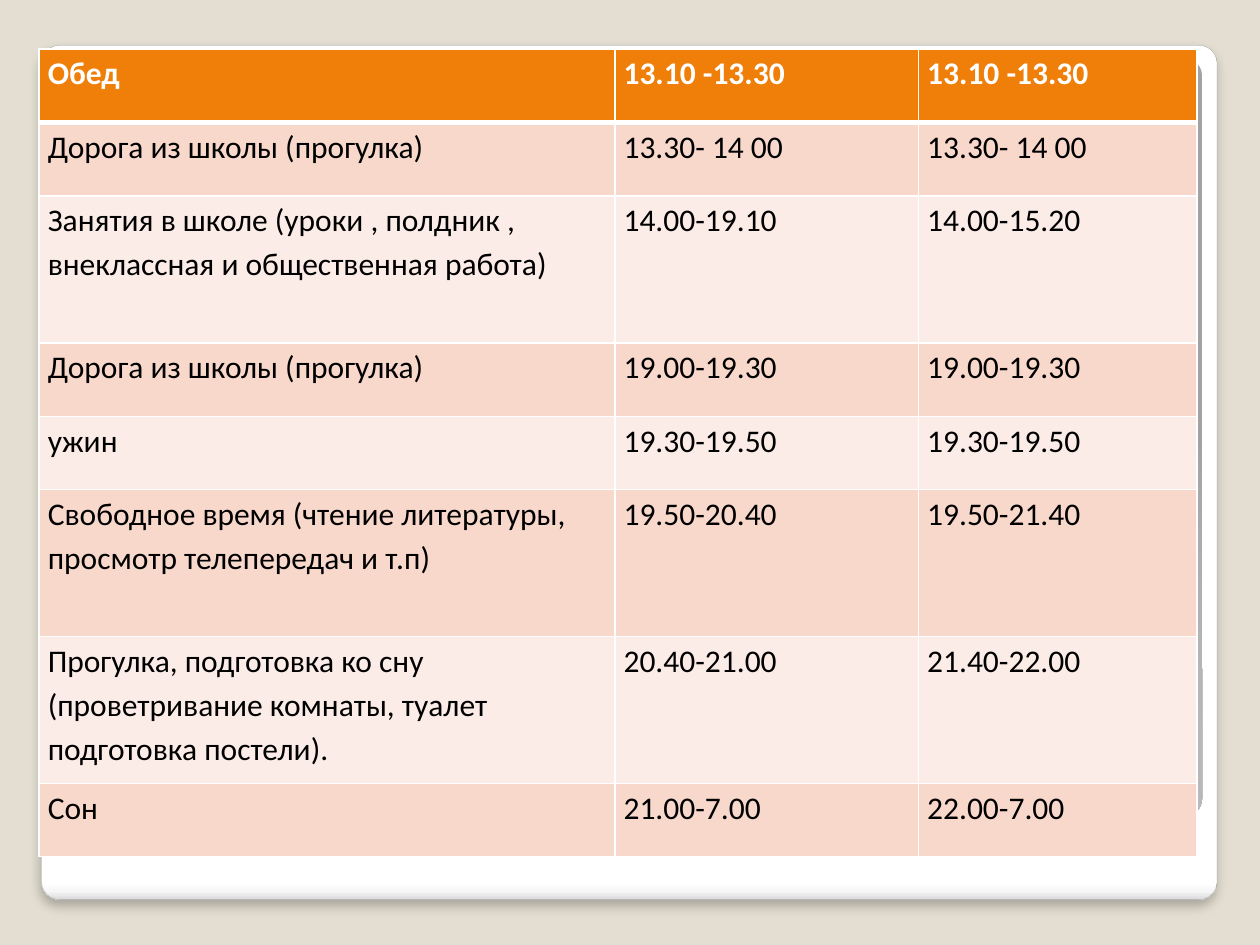
from dataclasses import dataclass
from typing import NamedTuple

from lxml.etree import SubElement
from pptx import Presentation
from pptx.dml.color import RGBColor
from pptx.enum.shapes import MSO_SHAPE
from pptx.oxml.ns import qn
from pptx.util import Inches, Pt

SLIDE_WIDTH, SLIDE_HEIGHT = Inches(10), Inches(7.5)


@dataclass(frozen=True)
class Theme:
    background: str = "E3DED1"
    outline: str = "A4A4A4"
    shadow: str = "000000"
    header: str = "F07F09"
    bands: tuple[str, str] = ("F9D8CC", "FCECE7")
    header_text: str = "FFFFFF"
    body_text: str = "000000"
    border: str = "FFFFFF"
    font: str = "Calibri"
    size: int = 18
    thin: int = 1
    thick: int = 3


class Box(NamedTuple):
    """Place and size in percent of the slide."""
    left: float
    top: float
    width: float
    height: float

    def lengths(self) -> tuple[int, int, int, int]:
        sides = (SLIDE_WIDTH, SLIDE_HEIGHT) * 2
        return tuple(round(side * share / 100) for side, share in zip(sides, self))


class Panel(NamedTuple):
    box: Box
    stops: tuple[tuple[int, str], ...]
    radial: bool
    raised: bool


class Activity(NamedTuple):
    name: str
    junior_time: str
    senior_time: str
    row_units: int = 1


THEME = Theme()
PANELS = (
    Panel(Box(3.3, 4.8, 93.3, 90.4),
          ((0, "FFFFFF"), (98, "FFFFFF"), (99, "F7F7F7"), (100, "DADADA")), False, True),
    Panel(Box(4.6, 6.27, 90.8, 80),
          ((0, "FFFFFF"), (55, "E1E1E1"), (100, "A2A2A2")), True, False),
)
TABLE_BOX = Box(3.1, 5.2, 91.9, 85.47)
COLUMN_UNITS = (4.57, 2.41, 2.21)
ACTIVITIES = (
    Activity("Обед", "13.10 -13.30", "13.10 -13.30"),
    Activity("Дорога из школы (прогулка)", "13.30- 14 00", "13.30- 14 00"),
    Activity("Занятия в школе (уроки , полдник , внеклассная и общественная работа)",
             "14.00-19.10", "14.00-15.20", 2),
    Activity("Дорога из школы (прогулка)", "19.00-19.30", "19.00-19.30"),
    Activity("ужин", "19.30-19.50", "19.30-19.50"),
    Activity("Свободное время (чтение литературы, просмотр телепередач и т.п)",
             "19.50-20.40", "19.50-21.40", 2),
    Activity("Прогулка, подготовка ко сну (проветривание комнаты, туалет подготовка постели).",
             "20.40-21.00", "21.40-22.00", 2),
    Activity("Сон", "21.00-7.00", "22.00-7.00"),
)


def add_element(parent, tag: str, **attributes):
    return SubElement(parent, qn(tag), {key: str(value) for key, value in attributes.items()})


def fill_gradient(shape, panel: Panel) -> None:
    properties = shape._element.spPr
    gradient = add_element(properties, "a:gradFill", rotWithShape=1)
    stops = add_element(gradient, "a:gsLst")
    for position, color in panel.stops:
        stop = add_element(stops, "a:gs", pos=position * 1000)
        add_element(stop, "a:srgbClr", val=color)
    if panel.radial:
        circle = add_element(gradient, "a:path", path="circle")
        add_element(circle, "a:fillToRect", l=50000, t=175000, r=50000, b=-75000)
    else:
        add_element(gradient, "a:lin", ang=90 * 60000, scaled=0)


def add_shadow(shape) -> None:
    effects = shape._element.spPr.find(qn("a:effectLst"))
    shadow = add_element(effects, "a:outerShdw", blurRad=Pt(6), dist=Pt(4),
                         dir=90 * 60000, algn="t", rotWithShape=0)
    color = add_element(shadow, "a:srgbClr", val=THEME.shadow)
    add_element(color, "a:alpha", val=25000)


def add_panel(slide, panel: Panel) -> None:
    shape = slide.shapes.add_shape(MSO_SHAPE.ROUNDED_RECTANGLE, *panel.box.lengths())
    shape.adjustments[0] = 0.021
    fill_gradient(shape, panel)
    shape.shadow.inherit = False
    if panel.raised:
        shape.line.color.rgb = RGBColor.from_string(THEME.outline)
        shape.line.width = Pt(0.16)
        add_shadow(shape)
    else:
        shape.line.fill.background()


def set_borders(cell, top: int, bottom: int) -> None:
    """Draw the four cell borders; they must stand before the fill."""
    properties = cell._tc.get_or_add_tcPr()
    widths = {"a:lnL": THEME.thin, "a:lnR": THEME.thin, "a:lnT": top, "a:lnB": bottom}
    for index, (tag, width) in enumerate(widths.items()):
        line = add_element(properties, tag, w=Pt(width))
        add_element(add_element(line, "a:solidFill"), "a:srgbClr", val=THEME.border)
        properties.insert(index, line)


def write_cell(cell, text: str, row: int) -> None:
    is_header = row == 0
    cell.margin_left = cell.margin_right = Inches(0.07)
    cell.margin_top = cell.margin_bottom = 0
    cell.fill.solid()
    cell.fill.fore_color.rgb = RGBColor.from_string(
        THEME.header if is_header else THEME.bands[(row - 1) % 2])
    set_borders(cell, THEME.thick if row == 1 else THEME.thin,
                THEME.thick if is_header else THEME.thin)
    paragraph = cell.text_frame.paragraphs[0]
    paragraph.line_spacing = 1.15
    paragraph.space_after = Pt(10)
    run = paragraph.add_run()
    run.text = text
    run.font.name = THEME.font
    run.font.size = Pt(THEME.size)
    run.font.bold = is_header
    run.font.color.rgb = RGBColor.from_string(
        THEME.header_text if is_header else THEME.body_text)


def add_schedule(slide) -> None:
    left, top, width, height = TABLE_BOX.lengths()
    table = slide.shapes.add_table(
        len(ACTIVITIES), len(COLUMN_UNITS), left, top, width, height).table
    for column, units in zip(table.columns, COLUMN_UNITS):
        column.width = round(width * units / sum(COLUMN_UNITS))
    total_units = sum(activity.row_units for activity in ACTIVITIES)
    for row, activity in enumerate(ACTIVITIES):
        table.rows[row].height = round(height * activity.row_units / total_units)
        for column, text in enumerate(activity[:len(COLUMN_UNITS)]):
            write_cell(table.cell(row, column), text, row)


def main() -> None:
    presentation = Presentation()
    presentation.slide_width, presentation.slide_height = SLIDE_WIDTH, SLIDE_HEIGHT
    slide = presentation.slides.add_slide(presentation.slide_layouts[6])
    slide.background.fill.solid()
    slide.background.fill.fore_color.rgb = RGBColor.from_string(THEME.background)
    for panel in PANELS:
        add_panel(slide, panel)
    add_schedule(slide)
    presentation.save("out.pptx")


if __name__ == "__main__":
    main()
